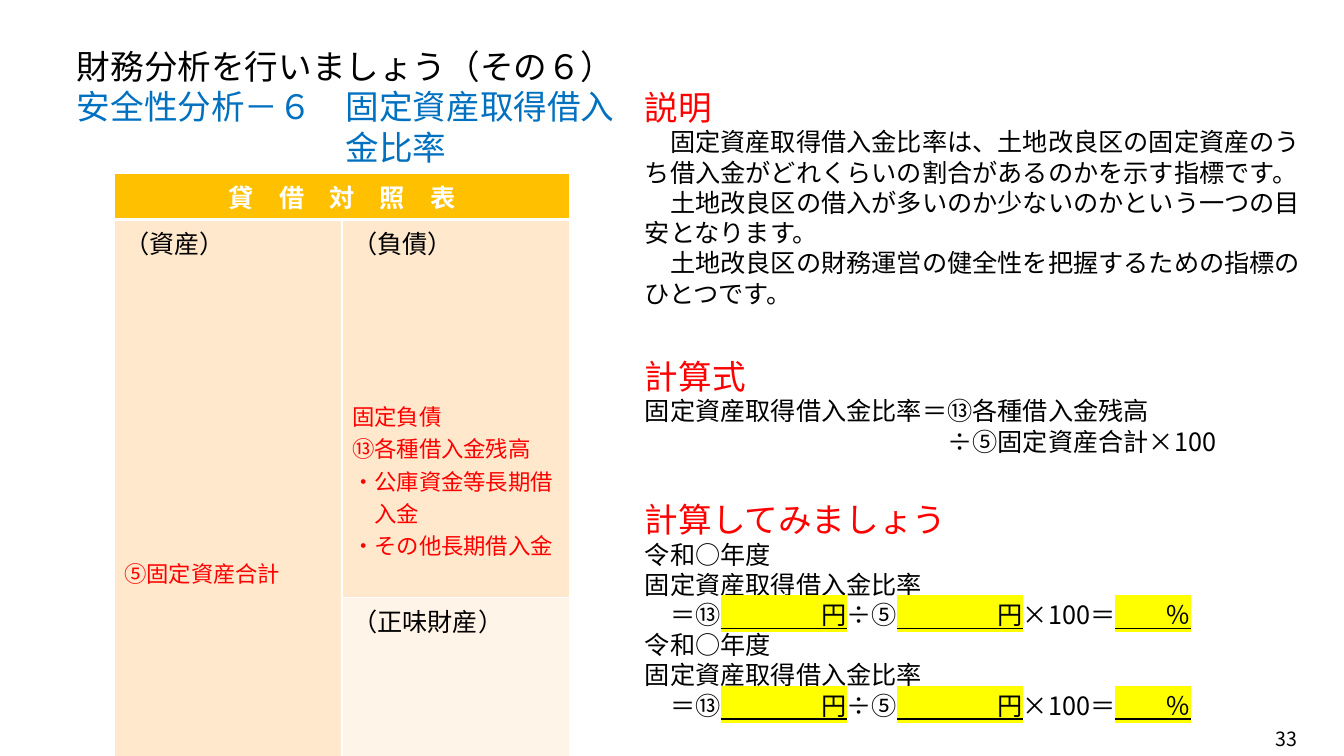
from dataclasses import dataclass

from lxml.etree import SubElement
from pptx import Presentation
from pptx.dml.color import RGBColor
from pptx.enum.text import MSO_AUTO_SIZE, PP_ALIGN
from pptx.oxml.ns import qn
from pptx.util import Emu, Pt


@dataclass(frozen=True)
class Theme:
    font: str = "Noto Sans CJK JP"
    black: str = "000000"
    white: str = "FFFFFF"
    red: str = "FF0000"
    blue: str = "0070C0"
    blank: str = "FFFF00"
    header: str = "FFC000"
    debt: str = "FFE8CC"
    equity: str = "FFF4E7"
    heading: int = 24
    body: int = 18
    item: int = 16
    number: int = 14


T = Theme()
LINE_PITCH = {T.heading: 29.2, T.body: 21.6, T.number: 17}
EMU_PER_PX = 914400 / 100.8


def px(n):
    return Emu(round(n * EMU_PER_PX))


def format_run(r, size, color, bold=False):
    r.font.size = Pt(size)
    r.font.bold = bold
    r.font.color.rgb = RGBColor.from_string(color)
    r.font.name = T.font
    SubElement(r.font._element, qn("a:ea"), typeface=T.font)


def mark_blank(r):
    """Underline and highlight a space to be filled in."""
    r.font.underline = True
    rPr = r.font._element
    highlight = SubElement(rPr, qn("a:highlight"))
    SubElement(highlight, qn("a:srgbClr"), val=T.blank)
    rPr.find(qn("a:latin")).addprevious(highlight)


def add_line(tf, text, size, color, bold=False):
    """Fill the first paragraph if it is unused, otherwise append one."""
    p = tf.paragraphs[0] if not tf.text else tf.add_paragraph()
    p.text = text
    for r in p.runs:
        format_run(r, size, color, bold)
    return p


def add_text(s, left, top, width, height, lines):
    """Add a text box from (text, size, colour) lines."""
    tf = s.shapes.add_textbox(px(left), px(top), px(width), px(height)).text_frame
    tf.word_wrap = True
    tf.auto_size = MSO_AUTO_SIZE.SHAPE_TO_FIT_TEXT
    for text, size, color in lines:
        add_line(tf, text, size, color).line_spacing = Pt(LINE_PITCH[size])
    return tf


def add_section(s, top, width, height, heading, body):
    lines = [(heading, T.heading, T.red)]
    lines += [(text, T.body, T.black) for text in body]
    return add_text(s, 635, top, width, height, lines)


def indent(p, chars, size):
    p._p.get_or_add_pPr().set("marL", str(Pt(chars * size)))


def add_calculation(tf):
    """Add one year's worksheet with blanks for the amounts."""
    for text in ("令和○年度", "固定資産取得借入金比率"):
        add_line(tf, text, T.body, T.black).line_spacing = Pt(LINE_PITCH[T.body])
    p = tf.add_paragraph()
    p.line_spacing = Pt(LINE_PITCH[T.body])
    yen, percent = "　　　　円", "　　％"
    for text in ("　＝⑬", yen, "÷⑤", yen, "×100＝", percent):
        r = p.add_run()
        r.text = text
        format_run(r, T.body, T.black)
        if text in (yen, percent):
            mark_blank(r)


def style_cell(cell, fill, bottom=1):
    tcPr = cell._tc.get_or_add_tcPr()
    for side, width in (("lnL", 1), ("lnR", 1), ("lnT", 1), ("lnB", bottom)):
        ln = SubElement(tcPr, qn(f"a:{side}"), w=str(Pt(width)))
        SubElement(SubElement(ln, qn("a:solidFill")), qn("a:srgbClr"), val=T.white)
    cell.fill.solid()
    cell.fill.fore_color.rgb = RGBColor.from_string(fill)


def fill_cell(cell, title, items=(), gap=0):
    """Write a cell title, then red items starting gap points below it."""
    tf = cell.text_frame
    add_line(tf, title, T.body, T.black)
    for i, text in enumerate(items):
        p = add_line(tf, text, T.item, T.red)
        if i == 0:
            p.space_before = Pt(gap)


def add_balance_sheet(s):
    heights = (46, 378, 178)
    table = s.shapes.add_table(3, 2, px(114), px(173), px(456), px(sum(heights))).table
    for column in table.columns:
        column.width = px(228)
    for row, height in zip(table.rows, heights):
        row.height = px(height)

    fills = ((T.header, T.header), (T.debt, T.debt), (T.debt, T.equity))
    for i, row_fills in enumerate(fills):
        for j, fill in enumerate(row_fills):
            style_cell(table.cell(i, j), fill, bottom=3 if i == 0 else 1)

    header, assets = table.cell(0, 0), table.cell(1, 0)
    header.merge(table.cell(0, 1))
    assets.merge(table.cell(2, 0))
    p = add_line(header.text_frame, "貸　借　対　照　表", T.body, T.white, bold=True)
    p.alignment = PP_ALIGN.CENTER
    fill_cell(assets, "（資産）", ["⑤固定資産合計"], gap=211)
    fill_cell(table.cell(1, 1), "（負債）", [
        "固定負債",
        "⑬各種借入金残高",
        "・公庫資金等長期借",
        "　入金",
        "・その他長期借入金",
    ], gap=99)
    fill_cell(table.cell(2, 1), "（正味財産）")


def main():
    prs = Presentation()
    prs.slide_width, prs.slide_height = px(1344), px(756)
    s = prs.slides.add_slide(prs.slide_layouts[6])

    add_balance_sheet(s)
    title = add_text(s, 67, 40, 569, 132, [
        ("財務分析を行いましょう（その６）", T.heading, T.black),
        ("安全性分析－６　固定資産取得借入", T.heading, T.blue),
        ("金比率", T.heading, T.blue),
    ])
    indent(title.paragraphs[-1], 8, T.heading)

    add_section(s, 81, 684, 234, "説明", [
        "　固定資産取得借入金比率は、土地改良区の固定資産のうち借入金が"
        "どれくらいの割合があるのかを示す指標です。",
        "　土地改良区の借入が多いのか少ないのかという一つの目安となります。",
        "　土地改良区の財務運営の健全性を把握するための指標のひとつです。",
    ])
    formula = add_section(s, 350, 662, 112, "計算式", [
        "固定資産取得借入金比率＝⑬各種借入金残高",
        "÷⑤固定資産合計×100",
    ])
    indent(formula.paragraphs[-1], 12, T.body)

    worksheet = add_section(s, 493, 672, 234, "計算してみましょう", [])
    for _ in range(2):
        add_calculation(worksheet)

    number = add_text(s, 1220, 722, 87, 34, [("33", T.number, T.black)])
    number.paragraphs[0].alignment = PP_ALIGN.RIGHT
    prs.save("out.pptx")


if __name__ == "__main__":
    main()
